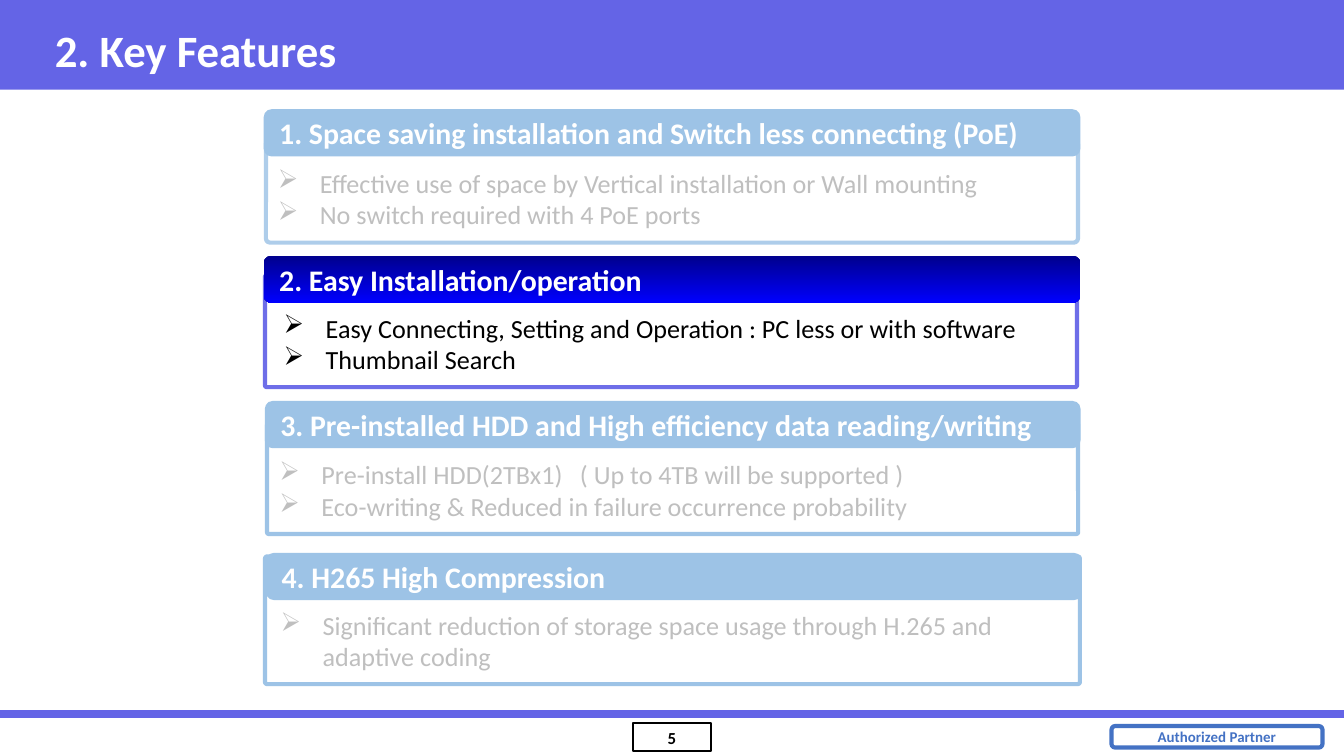
from pptx import Presentation
from pptx.dml.color import RGBColor
from pptx.enum.shapes import MSO_CONNECTOR, MSO_SHAPE
from pptx.enum.text import MSO_ANCHOR, MSO_AUTO_SIZE, PP_ALIGN
from pptx.oxml.ns import qn
from pptx.util import Pt
from lxml.etree import SubElement

FONT = "Calibri"
WHITE, BLACK, GREY = "FFFFFF", "000000", "BFBFBF"
VIOLET, PALE, BLUE = "6464E6", "9DC3E6", "4472C4"


def tint(color, code):
    color.rgb = RGBColor.from_string(code)


def style(font, size, code, bold=False):
    font.name, font.size, font.bold = FONT, Pt(size), bold
    tint(font.color, code)


def write(para, text, size, code, bold=False):
    run = para.add_run()
    run.text = text
    style(run.font, size, code, bold)


def block(slide, kind, box, fill=None, line=None, width=1, adj=None):
    shape = slide.shapes.add_shape(kind, *map(Pt, box))
    shape.shadow.inherit = False
    if adj is not None:
        shape.adjustments[0] = adj
    if fill:
        shape.fill.solid()
        tint(shape.fill.fore_color, fill)
    else:
        shape.fill.background()
    if line:
        tint(shape.line.color, line)
        shape.line.width = Pt(width)
    else:
        shape.line.fill.background()
    return shape


def label(shape, text, size, code, align=PP_ALIGN.CENTER, wrap=False):
    frame = shape.text_frame
    frame.word_wrap = wrap
    frame.vertical_anchor = MSO_ANCHOR.MIDDLE
    para = frame.paragraphs[0]
    para.alignment = align
    write(para, text, size, code, True)


def bullet(para, tab=None):
    props = para._p.get_or_add_pPr()
    props.set("marL", str(Pt(22.5)))
    props.set("indent", str(-Pt(22.5)))
    SubElement(props, qn("a:buChar")).set("char", "➢")
    if tab:
        stops = SubElement(props, qn("a:tabLst"))
        stop = SubElement(stops, qn("a:tab"))
        stop.set("pos", str(Pt(tab)))
        stop.set("algn", "l")


def banner(slide, box, title):
    x, y, w, h = box
    block(slide, MSO_SHAPE.RECTANGLE, box, VIOLET)
    text = slide.shapes.add_textbox(Pt(x + 22.3), Pt(y + 5.8), Pt(w - 53.3), Pt(h - 6.2))
    label(text, title, 24, WHITE, PP_ALIGN.LEFT, True)


def card(slide, box, title, items, frame, body, edge=PALE, adj=0.016, live=False):
    """Frame is (dx, dy, w, h) and body (dx, dy, w), both from the box corner."""
    x, y, w, h = box

    # Outline
    fx, fy, fw, fh = frame
    block(slide, MSO_SHAPE.ROUNDED_RECTANGLE, (x + fx, y + fy, fw, fh),
          line=edge, width=2.25, adj=adj)

    # Bullet list
    bx, by, bw = body
    text = slide.shapes.add_textbox(Pt(x + bx), Pt(y + by), Pt(bw), Pt(41.2)).text_frame
    text.word_wrap = True
    text.auto_size = MSO_AUTO_SIZE.SHAPE_TO_FIT_TEXT
    text.vertical_anchor = MSO_ANCHOR.MIDDLE
    for i, item in enumerate(items):
        para = text.add_paragraph() if i else text.paragraphs[0]
        bullet(para, 161 if "\t" in item else None)
        write(para, item, 14, BLACK if live else GREY)

    # Heading bar
    bar = block(slide, MSO_SHAPE.ROUNDED_RECTANGLE, box, PALE)
    if live:
        bar.fill.gradient()
        bar.fill.gradient_angle = 270
        for stop, place, code in zip(bar.fill.gradient_stops, (0, 1), ("00008C", "0000FF")):
            stop.position = place
            tint(stop.color, code)
    label(bar, title, 16, WHITE, PP_ALIGN.LEFT)


def footer(slide, box, page, note):
    x, y, w, h = box
    # Rule
    rule = slide.shapes.add_connector(MSO_CONNECTOR.STRAIGHT, Pt(x), Pt(y), Pt(x + w), Pt(y))
    tint(rule.line.color, VIOLET)
    rule.line.width = Pt(4.5)
    SubElement(rule._element.spPr, qn("a:effectLst"))

    # Page number
    num = block(slide, MSO_SHAPE.RECTANGLE, (x + w / 2 - 21, y + 5, 42, 15), line=BLACK)
    text = num.text_frame
    text.margin_left = text.margin_right = text.margin_top = text.margin_bottom = Pt(2)
    label(num, page, 9, BLACK, wrap=True)

    # Partner badge
    badge = block(slide, MSO_SHAPE.ROUNDED_RECTANGLE, (x + w - 124.5, y + 6.5, 113, 11.5),
                  line=BLUE, width=2.25)
    label(badge, note, 8, BLUE)


def main():
    deck = Presentation()
    deck.slide_width, deck.slide_height = Pt(720), Pt(405)
    slide = deck.slides.add_slide(deck.slide_layouts[6])

    banner(slide, (0, 0, 720, 48), "2. Key Features")
    footer(slide, (0, 382.5, 720, 22.5), "5", "Authorized Partner")

    card(slide, (141.3, 58.5, 437.5, 25.3),
         "1. Space saving installation and Switch less connecting (PoE)",
         ["Effective use of space by Vertical installation or Wall mounting",
          "No switch required with 4 PoE ports"],
         (1.2, 16.5, 435, 55), (0.5, 27.2, 407), "AECDEA", 0.04)
    card(slide, (141.3, 136.9, 437.5, 25.3),
         "2. Easy Installation/operation",
         ["Easy Connecting, Setting and Operation : PC less or with software",
          "Thumbnail Search"],
         (0.7, 10.5, 435, 60), (3.6, 26.5, 428.5), "6E6EE8", live=True)
    card(slide, (141.9, 214.8, 437, 25.3),
         "3. Pre-installed HDD and High efficiency data reading/writing",
         ["Pre-install HDD(2TBx1)\t( Up to 4TB will be supported )",
          "Eco-writing & Reduced in failure occurrence probability"],
         (1.2, 12, 434.5, 59.3), (0.7, 27.2, 378))
    card(slide, (142.6, 296.2, 437, 25.3),
         "4. H265 High Compression",
         ["Significant reduction of storage space usage through H.265 and adaptive coding"],
         (-0.6, 1.9, 436.5, 68.4), (0.7, 26.4, 424))

    deck.save("out.pptx")


if __name__ == "__main__":
    main()
